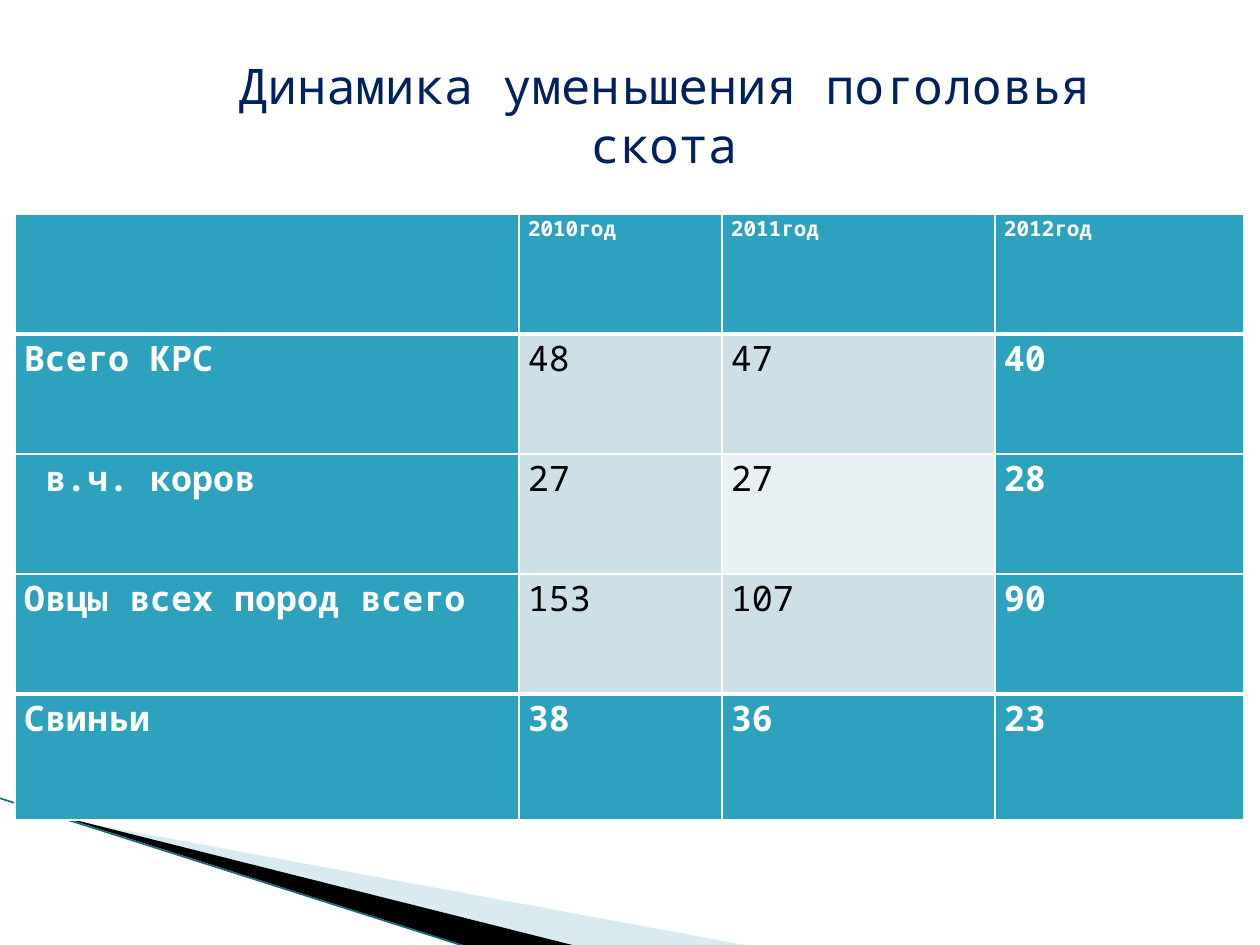
from lxml import etree
from pptx import Presentation
from pptx.dml.color import RGBColor
from pptx.enum.shapes import MSO_CONNECTOR
from pptx.enum.text import PP_ALIGN
from pptx.oxml.ns import qn
from pptx.util import Emu, Pt

SCALE = 914400 / 126
FONT = "Noto Sans Mono"
TEAL, PALE, LIGHT = "2DA2BF", "CDE0E8", "E8F0F4"
WHITE, BLACK, NAVY = "FFFFFF", "000000", "002060"
CENTER, JUSTIFY = PP_ALIGN.CENTER, PP_ALIGN.JUSTIFY
STRAIGHT = MSO_CONNECTOR.STRAIGHT
COLS = (504, 203, 273, 249)
HEIGHTS = (120, 120, 120, 120, 126)
ROWS = (
    ("", "2010год", "2011год", "2012год"),
    ("Всего КРС", "48", "47", "40"),
    (" в.ч. коров", "27", "27", "28"),
    ("Овцы всех пород всего", "153", "107", "90"),
    ("Свиньи", "38", "36", "23"),
)


def px(n):
    """Turn pixels into EMU."""
    return Emu(round(n * SCALE))


def rgb(color):
    """Turn a hex string into a colour."""
    return RGBColor.from_string(color)


def add_run(para, text, size, color, bold=False):
    """Add one styled run to a paragraph."""
    run = para.add_run()
    run.text = text
    font = run.font
    font.name, font.size, font.bold = FONT, Pt(size), bold
    font.color.rgb = rgb(color)


def set_frame(shape, points, box):
    """Give an outline a frame of its own, keeping its points in place."""
    left, top, width, height = box
    trace = shape._element.find(".//" + qn("a:path"))
    trace.set("w", str(width))
    trace.set("h", str(height))
    for node, (x, y) in zip(trace.iter(qn("a:pt")), points):
        node.set("x", str(x - left))
        node.set("y", str(y - top))
    shape.left, shape.top = px(left), px(top)
    shape.width, shape.height = px(width), px(height)


def add_wedge(slide, points, box, color, alpha=100):
    """Draw a filled outline through the points."""
    form = slide.shapes.build_freeform(*points[0], scale=SCALE)
    form.add_line_segments(points[1:] + points[:1], close=True)
    shape = form.convert_to_shape()
    set_frame(shape, points + points[:1], box)
    shape.shadow.inherit = False
    shape.fill.solid()
    shape.fill.fore_color.rgb = rgb(color)
    shape.line.fill.background()
    if alpha < 100:
        tone = shape.fill._xPr.find(".//" + qn("a:srgbClr"))
        etree.SubElement(tone, qn("a:alpha"), val=str(alpha * 1000))


def add_line(slide, start, end, color, width):
    """Draw a straight line without a shadow."""
    ends = [px(n) for n in (*start, *end)]
    line = slide.shapes.add_connector(STRAIGHT, *ends)
    line.line.color.rgb = rgb(color)
    line.line.width = Pt(width)
    etree.SubElement(line._element.spPr, qn("a:effectLst"))


def add_title(slide, text, box):
    """Add the centred slide title."""
    frame = slide.shapes.add_textbox(*map(px, box)).text_frame
    frame.word_wrap = True
    para = frame.paragraphs[0]
    para.alignment = CENTER
    add_run(para, text, 28, NAVY)


def add_edge(cell, side, width):
    """Add a white border to one side of a cell."""
    props = cell._tc.get_or_add_tcPr()
    edge = etree.SubElement(props, qn("a:ln" + side), w=str(Pt(width)))
    fill = etree.SubElement(edge, qn("a:solidFill"))
    etree.SubElement(fill, qn("a:srgbClr"), val=WHITE)


def fill_cell(cell, text, row, col):
    """Style and fill one cell by its place in the table."""
    last = len(ROWS) - 1
    inner = 0 < row < last and col in (1, 2)
    cell.margin_left = cell.margin_right = px(9)
    cell.margin_top = cell.margin_bottom = 0
    add_edge(cell, "L", 1)
    add_edge(cell, "R", 1)
    add_edge(cell, "T", 3 if row in (1, last) else 1)
    add_edge(cell, "B", 3 if row in (0, last - 1) else 1)
    tone = LIGHT if (row, col) == (2, 2) else PALE
    cell.fill.solid()
    cell.fill.fore_color.rgb = rgb(tone if inner else TEAL)
    para = cell.text_frame.paragraphs[0]
    para.alignment = JUSTIFY
    if text:
        size = 20 if row else 12
        add_run(para, text, size, BLACK if inner else WHITE, not inner)


def add_grid(slide, left, top):
    """Add the livestock table."""
    size = (px(sum(COLS)), px(sum(HEIGHTS)))
    frame = slide.shapes.add_table(
        len(ROWS), len(COLS), px(left), px(top), *size)
    table = frame.table
    table.horz_banding = False
    table.first_col = table.last_col = table.last_row = True
    for col, width in zip(table.columns, COLS):
        col.width = px(width)
    for row, height in zip(table.rows, HEIGHTS):
        row.height = px(height)
    for r, texts in enumerate(ROWS):
        for c, text in enumerate(texts):
            fill_cell(table.cell(r, c), text, r, c)


def main():
    """Build the slide and save it."""
    deck = Presentation()
    deck.slide_width, deck.slide_height = px(1260), px(945)
    slide = deck.slides.add_slide(deck.slide_layouts[6])
    add_wedge(slide, [(69, 820), (750, 946), (575, 946), (69, 819)],
              (98, 689, 524, 199), "A0CBDC", 40)
    add_wedge(slide, [(67, 818), (576, 946), (469, 947), (68, 819)],
              (-8, 798, 524, 116), BLACK)
    add_line(slide, (-1, 798), (467, 947), "1C6A80", 0.95)
    add_title(slide, "Динамика уменьшения поголовья скота",
              (177, 49, 974, 72))
    add_grid(slide, 15, 214)
    deck.save("out.pptx")


if __name__ == "__main__":
    main()
